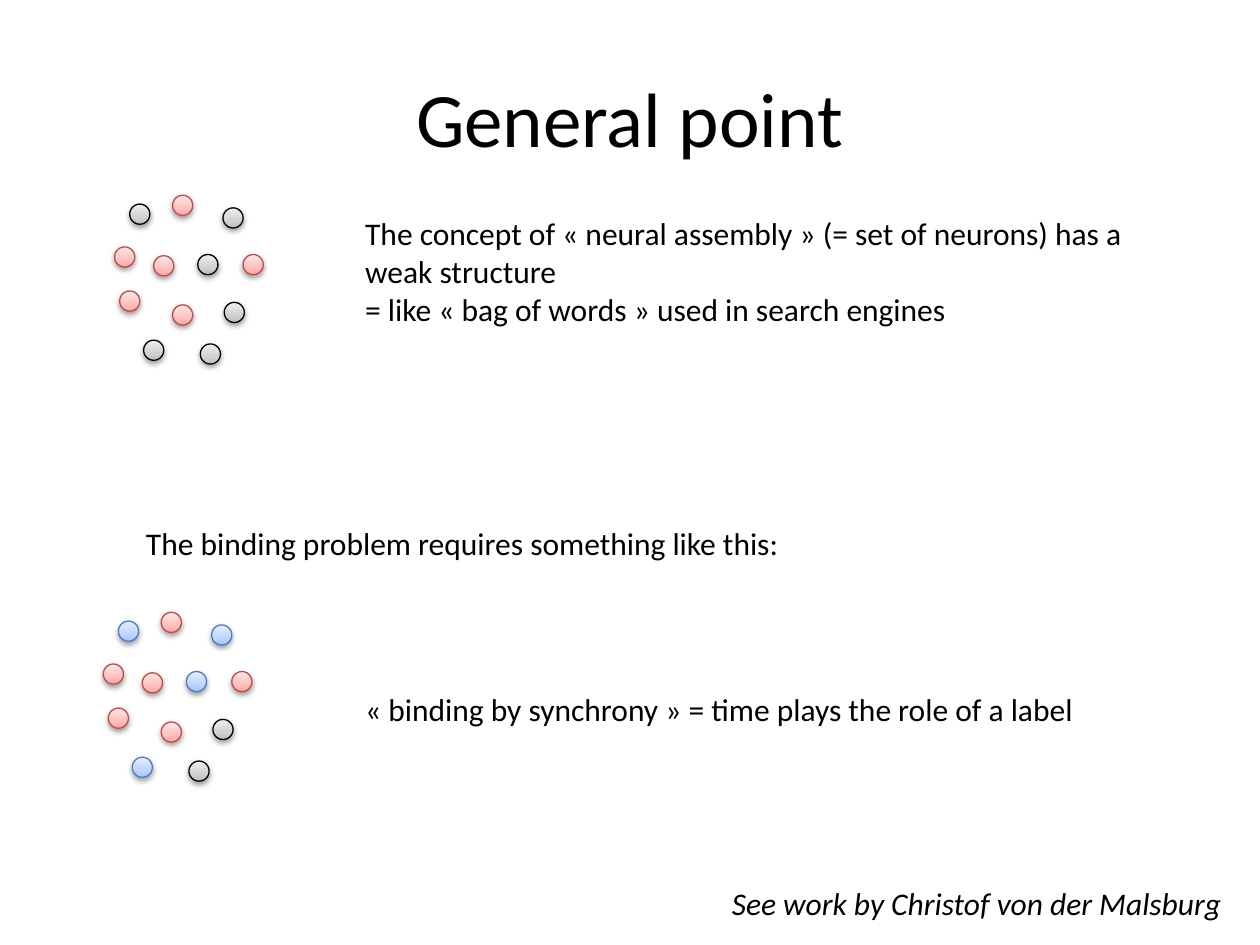
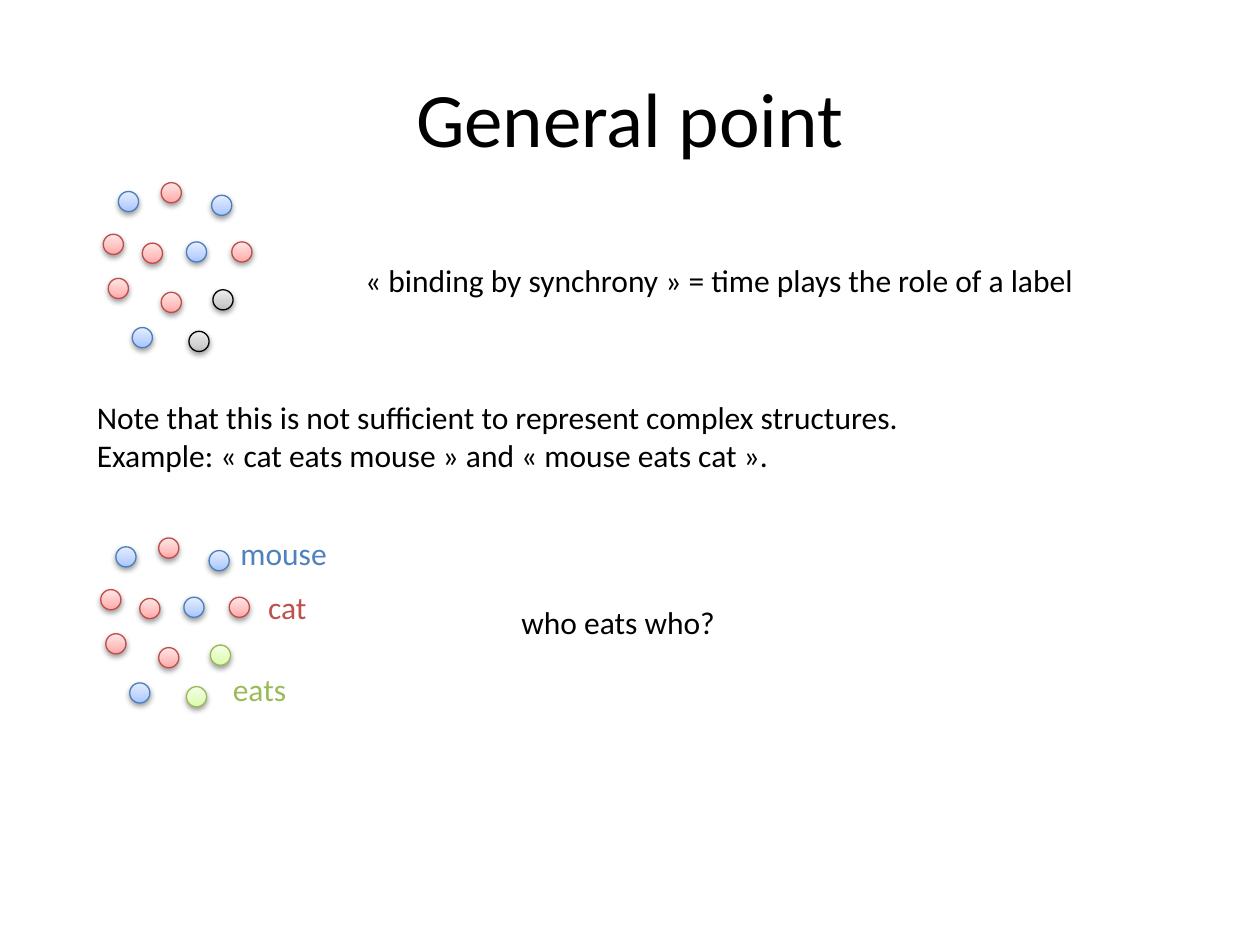
"""Build two slides on neural assemblies and binding by synchrony."""
from copy import deepcopy
from dataclasses import dataclass
from typing import NamedTuple

from pptx import Presentation
from pptx.dml.color import RGBColor as Rgb
from pptx.enum.shapes import MSO_SHAPE as Kind
from pptx.enum.text import MSO_ANCHOR as Anchor, MSO_AUTO_SIZE as Fit, PP_ALIGN as Align
from pptx.oxml import parse_xml
from pptx.oxml.ns import nsdecls, qn
from pptx.shapes.autoshape import Shape
from pptx.slide import Slide
from pptx.util import Inches, Pt


class Tone(NamedTuple):
    line: str
    stops: tuple[str, str, str]


@dataclass(frozen=True)
class Theme:
    font: str = "Calibri"
    head: int = 44
    body: int = 18
    ink: str = "000000"
    cat: str = "C0504D"
    mouse: str = "4F81BD"
    eats: str = "9BBB59"
    red: Tone = Tone("BF4C48", ("FFA6A5", "FFC0BF", "FFE7E7"))
    blue: Tone = Tone("4B7EBC", ("A4C4FF", "BFD4FF", "E6EEFF"))
    green: Tone = Tone("98B955", ("DAFDA7", "E4FCC2", "F5FFE7"))
    gray: Tone = Tone("000000", ("BDBDBD", "D1D1D1", "EEEEEE"))


class Cell(NamedTuple):
    x: float
    y: float
    group: str


class Label(NamedTuple):
    text: str
    x: float
    y: float
    wide: float
    color: str


THEME = Theme()
SIZE = 0.16
STOPS = (0, 0.35, 1)
CELLS = (
    Cell(0.12, 0.07, "mouse"), Cell(0.46, 0, "cat"), Cell(0.04, 0.76, "cat"),
    Cell(0.31, 0.48, "cat"), Cell(0.23, 1.15, "mouse"), Cell(0.46, 0.87, "cat"),
    Cell(0.86, 0.1, "mouse"), Cell(0, 0.41, "cat"), Cell(0.66, 0.47, "mouse"),
    Cell(1.02, 0.47, "cat"), Cell(0.87, 0.85, "eats"), Cell(0.68, 1.18, "eats"),
)
BAG = {"cat": THEME.red, "mouse": THEME.gray, "eats": THEME.gray}
BOUND = BAG | {"mouse": THEME.blue}
FULL = BOUND | {"eats": THEME.green}
LABELS = (
    Label("cat", 2.03, 4.62, 0.51, THEME.cat),
    Label("mouse", 1.81, 4.19, 0.89, THEME.mouse),
    Label("eats", 1.75, 5.27, 0.63, THEME.eats),
)


def write(slide: Slide, text: str, x: float, y: float, wide: float, high: float = 0.4, *,
          size: int = THEME.body, color: str = THEME.ink, slant: bool = False,
          wrap: bool = False, align: Align = Align.LEFT,
          anchor: Anchor = Anchor.TOP, fit: Fit = Fit.SHAPE_TO_FIT_TEXT) -> None:
    box = slide.shapes.add_textbox(Inches(x), Inches(y), Inches(wide), Inches(high))
    frame = box.text_frame
    frame.text = text
    frame.word_wrap = wrap
    frame.auto_size = fit
    frame.vertical_anchor = anchor
    for par in frame.paragraphs:
        par.alignment = align
        font = par.runs[0].font
        font.name, font.size, font.italic = THEME.font, Pt(size), slant
        font.color.rgb = Rgb.from_string(color)


def shade(dot: Shape) -> None:
    dot.shadow.inherit = False
    dot.element.spPr.find(qn("a:effectLst")).append(parse_xml(
        f'<a:outerShdw {nsdecls("a")} blurRad="40000" dist="20000" dir="5400000" '
        'rotWithShape="0"><a:srgbClr val="000000"><a:alpha val="38000"/>'
        '</a:srgbClr></a:outerShdw>'))


def paint(dot: Shape, tone: Tone) -> None:
    dot.fill.gradient()
    dot.fill.gradient_angle = 90
    ramp = next(dot.element.spPr.iter(qn("a:gsLst")))
    ramp.append(deepcopy(ramp[0]))
    for stop, place, color in zip(dot.fill.gradient_stops, STOPS, tone.stops):
        stop.position = place
        stop.color.rgb = Rgb.from_string(color)
    dot.line.color.rgb = Rgb.from_string(tone.line)
    dot.line.width = Pt(0.75)


def cluster(slide: Slide, left: float, top: float, tones: dict[str, Tone]) -> None:
    for cell in CELLS:
        dot = slide.shapes.add_shape(Kind.OVAL, Inches(left + cell.x), Inches(top + cell.y),
                                     Inches(SIZE), Inches(SIZE))
        paint(dot, tones[cell.group])
        shade(dot)


def start(deck: Presentation) -> Slide:
    slide = deck.slides.add_slide(deck.slide_layouts[6])
    write(slide, "General point", 0.5, 0.3, 9, 1.25, size=THEME.head, wrap=True,
          align=Align.CENTER, anchor=Anchor.MIDDLE, fit=Fit.NONE)
    return slide


def bind(slide: Slide, top: float) -> None:
    cluster(slide, 0.82, top, BOUND)
    write(slide, "« binding by synchrony » = time plays the role of a label",
          2.8, top + 0.57, 5.89)


def concept(deck: Presentation) -> None:
    slide = start(deck)
    cluster(slide, 0.91, 1.55, BAG)
    write(slide, "The concept of « neural assembly » (= set of neurons) has a weak structure\n"
          "= like « bag of words » used in search engines", 2.8, 1.65, 6.53, 1.01, wrap=True)
    write(slide, "The binding problem requires something like this:", 1.06, 4.11, 5.29)
    bind(slide, 4.86)
    write(slide, "See work by Christof von der Malsburg", 5.71, 6.97, 4.17, slant=True)


def limits(deck: Presentation) -> None:
    slide = start(deck)
    bind(slide, 1.45)
    write(slide, "Note that this is not sufficient to represent complex structures.\n"
          "Example: « cat eats mouse » and « mouse eats cat ».", 0.67, 3.11, 6.64, 0.71)
    cluster(slide, 0.8, 4.27, FULL)
    for tag in LABELS:
        write(slide, tag.text, tag.x, tag.y, tag.wide, color=tag.color)
    write(slide, "who eats who?", 4.04, 4.74, 1.76)


def main() -> None:
    deck = Presentation()
    deck.slide_width, deck.slide_height = Inches(10), Inches(7.5)
    concept(deck)
    limits(deck)
    deck.save("out.pptx")


if __name__ == "__main__":
    main()
